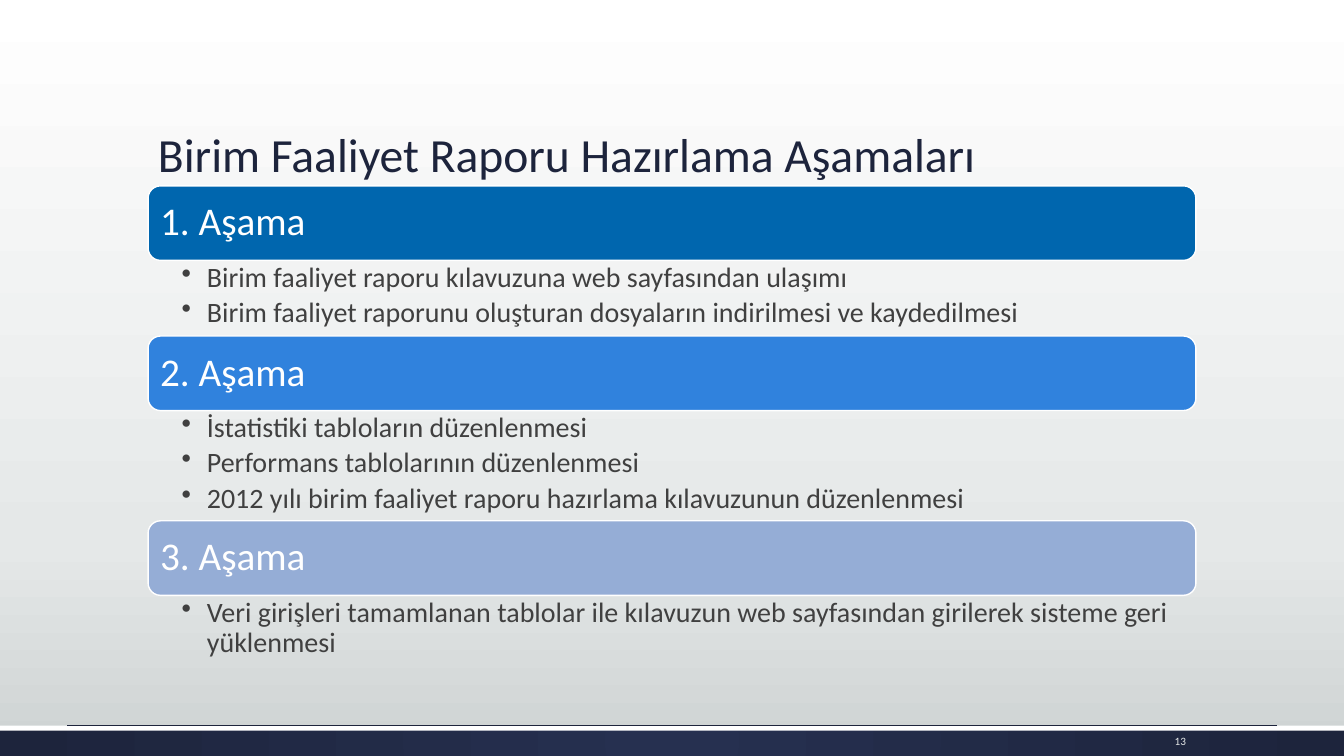
from copy import deepcopy
from dataclasses import dataclass

from lxml import etree
from pptx import Presentation
from pptx.dml.color import RGBColor
from pptx.dml.fill import FillFormat
from pptx.enum.shapes import MSO_CONNECTOR as Connector, MSO_SHAPE as Preset
from pptx.enum.text import MSO_ANCHOR as Anchor, PP_ALIGN as Align
from pptx.oxml.ns import qn
from pptx.slide import Slide
from pptx.text.text import TextFrame, _Paragraph as Paragraph
from pptx.util import Pt

FONT = "Calibri"
COLORS = {
    "white": "FFFFFF",
    "mist": "E5E8E8",
    "silver": "CDD2D2",
    "navy": "1D243C",
    "navy_light": "263050",
    "body": "404040",
    "stage_1": "0066AE",
    "stage_2": "3082DD",
    "stage_3": "95ADD6",
}

# Layout, in px
SLIDE_WIDTH, SLIDE_HEIGHT = 1280, 720
LEFT, WIDTH = 141, 998
STAGES_TOP, BAR_HEIGHT = 177, 71
FOOTER_TOP = 691


@dataclass
class Stage:
    heading: str
    color: str
    steps: list[str]
    steps_height: int


STAGES = [
    Stage("1. Aşama", "stage_1", [
        "Birim faaliyet raporu kılavuzuna web sayfasından ulaşımı",
        "Birim faaliyet raporunu oluşturan dosyaların indirilmesi ve kaydedilmesi",
    ], 72),
    Stage("2. Aşama", "stage_2", [
        "İstatistiki tabloların düzenlenmesi",
        "Performans tablolarının düzenlenmesi",
        "2012 yılı birim faaliyet raporu hazırlama kılavuzunun düzenlenmesi",
    ], 105),
    Stage("3. Aşama", "stage_3", [
        "Veri girişleri tamamlanan tablolar ile kılavuzun web sayfasından "
        "girilerek sisteme geri yüklenmesi",
    ], 65),
]


def px(value: int) -> int:
    return value * 9525


def rgb(name: str) -> RGBColor:
    return RGBColor.from_string(COLORS[name])


def set_gradient(fill: FillFormat, owner, stops: list[tuple[float, str]]):
    """Fill with the given stops and return the gradient element."""
    fill.gradient()
    gradient = owner.find(".//" + qn("a:gradFill"))
    stop_list = gradient.find(qn("a:gsLst"))
    while len(stop_list) < len(stops):
        stop_list.append(deepcopy(stop_list[0]))
    for stop, (position, color) in zip(fill.gradient_stops, stops):
        stop.position = position
        stop.color.rgb = rgb(color)
    return gradient


def format_paragraph(paragraph: Paragraph, size: int, color: str) -> None:
    for run in paragraph.runs:
        run.font.name = FONT
        run.font.size = Pt(size)
        run.font.color.rgb = rgb(color)


def set_insets(frame: TextFrame, left: int, top: int, right: int, bottom: int) -> None:
    frame.margin_left, frame.margin_top = px(left), px(top)
    frame.margin_right, frame.margin_bottom = px(right), px(bottom)


def add_text(slide: Slide, left: int, top: int, width: int, height: int,
             text: str, anchor: Anchor) -> TextFrame:
    box = slide.shapes.add_textbox(px(left), px(top), px(width), px(height))
    frame = box.text_frame
    frame.word_wrap = True
    frame.vertical_anchor = anchor
    frame.text = text
    return frame


def add_block(slide: Slide, preset: Preset, left: int, top: int, width: int, height: int):
    shape = slide.shapes.add_shape(preset, px(left), px(top), px(width), px(height))
    shape.shadow.inherit = False
    shape.line.fill.background()
    return shape


def add_bullet(paragraph: Paragraph) -> None:
    properties = paragraph._p.get_or_add_pPr()
    properties.set("marL", str(px(24)))
    properties.set("indent", str(px(-24)))
    etree.SubElement(properties, qn("a:buChar")).set("char", "•")


def add_stage(slide: Slide, stage: Stage, top: int) -> int:
    """Draw the heading bar and its steps; return the bottom edge."""
    bar = add_block(slide, Preset.ROUNDED_RECTANGLE, LEFT, top, WIDTH, BAR_HEIGHT)
    bar.fill.solid()
    bar.fill.fore_color.rgb = rgb(stage.color)
    bar.line.color.rgb = rgb("white")
    bar.line.width = Pt(1)
    frame = bar.text_frame
    frame.text = stage.heading
    frame.vertical_anchor = Anchor.MIDDLE
    set_insets(frame, 8, 8, 8, 8)
    heading = frame.paragraphs[0]
    heading.alignment = Align.LEFT
    heading.line_spacing = 0.9
    format_paragraph(heading, 28, "white")

    steps_top = top + BAR_HEIGHT
    frame = add_text(slide, LEFT, steps_top, WIDTH, stage.steps_height,
                     "\n".join(stage.steps), Anchor.TOP)
    set_insets(frame, 32, 3, 15, 3)
    for paragraph in frame.paragraphs:
        paragraph.line_spacing = 0.9
        paragraph.space_after = Pt(3.5)
        add_bullet(paragraph)
        format_paragraph(paragraph, 20, "body")
    return steps_top + stage.steps_height


def add_footer(slide: Slide) -> None:
    band = add_block(slide, Preset.RECTANGLE, 0, FOOTER_TOP, SLIDE_WIDTH,
                     SLIDE_HEIGHT - FOOTER_TOP)
    gradient = set_gradient(band.fill, band._element, [(0, "navy_light"), (1, "navy")])
    gradient.remove(gradient.find(qn("a:lin")))
    radial = etree.SubElement(gradient, qn("a:path"))
    radial.set("path", "circle")
    center = etree.SubElement(radial, qn("a:fillToRect"))
    for side in "ltrb":
        center.set(side, "50000")

    stripe = add_block(slide, Preset.RECTANGLE, 0, FOOTER_TOP, SLIDE_WIDTH, 5)
    stripe.fill.solid()
    stripe.fill.fore_color.rgb = rgb("white")

    rule = slide.shapes.add_connector(Connector.STRAIGHT, px(64), px(FOOTER_TOP),
                                      px(SLIDE_WIDTH - 64), px(FOOTER_TOP))
    rule.line.color.rgb = rgb("navy")
    rule.line.width = Pt(0.75)
    etree.SubElement(rule._element.spPr, qn("a:effectLst"))

    number = add_text(slide, 1072, 693, 67, 25, "13", Anchor.MIDDLE).paragraphs[0]
    number.alignment = Align.RIGHT
    format_paragraph(number, 8, "mist")


def main() -> None:
    presentation = Presentation()
    presentation.slide_width = px(SLIDE_WIDTH)
    presentation.slide_height = px(SLIDE_HEIGHT)
    slide = presentation.slides.add_slide(presentation.slide_layouts[6])

    # Background, light at the top
    background = slide.background.fill
    set_gradient(background, slide._element, [(0, "white"), (0.72, "mist"), (1, "silver")])
    background.gradient_angle = 270

    # Title
    title = add_text(slide, LEFT, 49, WIDTH, 130,
                     "Birim Faaliyet Raporu Hazırlama Aşamaları", Anchor.BOTTOM).paragraphs[0]
    title.line_spacing = 0.9
    format_paragraph(title, 34, "navy")

    # Stages, stacked from the top
    top = STAGES_TOP
    for stage in STAGES:
        top = add_stage(slide, stage, top)

    add_footer(slide)
    presentation.save("out.pptx")


if __name__ == "__main__":
    main()
